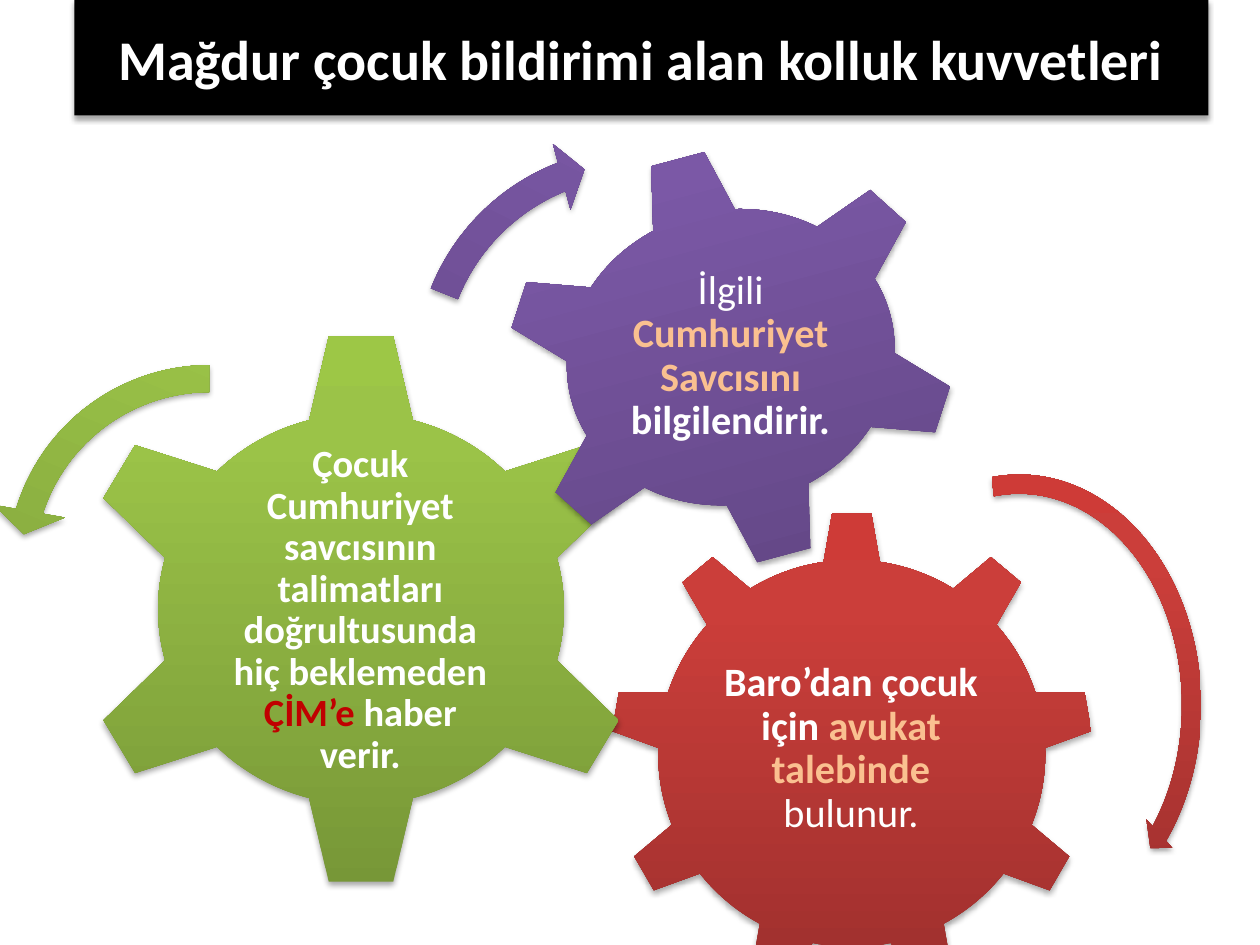
from copy import deepcopy

from lxml import etree
from pptx import Presentation
from pptx import util as u
from pptx.dml.color import RGBColor
from pptx.enum import shapes, text
from pptx.oxml.ns import qn

GEAR6 = shapes.MSO_SHAPE.GEAR_6
GEAR9 = shapes.MSO_SHAPE.GEAR_9
ARROW = shapes.MSO_SHAPE.CIRCULAR_ARROW
LEFT_ARROW = shapes.MSO_SHAPE.LEFT_CIRCULAR_ARROW
WHITE, PEACH, DARK_RED = "FFFFFF", "FAC090", "C00000"
RED = ("9C2F2D", "CB3E3A", "CE3B37")
GREEN = ("779737", "9BC348", "9DC746")
PURPLE = ("5F4480", "7B58A6", "7C57A8")


def rgb(value):
    return RGBColor.from_string(value)


class Deck:
    """Slide builder with one font, a soft shadow and three-stop gradients."""

    font = "Calibri"
    stops = (0, 0.8, 1)
    inset = 2

    def __init__(self, width, height):
        self.prs = Presentation()
        self.prs.slide_width, self.prs.slide_height = u.Pt(width), u.Pt(height)
        self.s = self.prs.slides.add_slide(self.prs.slide_layouts[6])

    def shadow(self, sp):
        sp.shadow.inherit = False
        effects = sp._element.spPr.find(qn("a:effectLst"))
        outer = etree.SubElement(
            effects, qn("a:outerShdw"), blurRad=str(u.Pt(3.15)),
            dist=str(u.Pt(1.8)), dir="5400000", rotWithShape="0")
        color = etree.SubElement(outer, qn("a:srgbClr"), val="000000")
        etree.SubElement(color, qn("a:alpha"), val="35000")

    def shape(self, kind, box, rotation=0, adjustments=()):
        sp = self.s.shapes.add_shape(kind, *map(u.Pt, box))
        sp.rotation = rotation
        for i, value in enumerate(adjustments):
            sp.adjustments[i] = value
        sp.line.fill.background()
        self.shadow(sp)
        return sp

    def gradient(self, kind, box, colors, rotation=0, adjustments=()):
        sp = self.shape(kind, box, rotation, adjustments)
        sp.fill.gradient()
        sp.fill.gradient_angle = 90
        stop_list = sp._element.spPr.find(qn("a:gradFill")).find(qn("a:gsLst"))
        stop_list.append(deepcopy(stop_list[-1]))
        for stop, position, color in zip(sp.fill.gradient_stops, self.stops, colors):
            stop.position = position
            stop.color.rgb = rgb(color)

    def add_runs(self, tf, runs, size):
        tf.word_wrap = True
        tf.vertical_anchor = text.MSO_ANCHOR.MIDDLE
        p = tf.paragraphs[0]
        p.alignment = text.PP_ALIGN.CENTER
        for words, color, bold in runs:
            r = p.add_run()
            r.text = words
            r.font.name, r.font.size, r.font.bold = self.font, u.Pt(size), bold
            r.font.color.rgb = rgb(color)
        return p

    def title(self, box, words):
        sp = self.shape(shapes.MSO_SHAPE.RECTANGLE, box)
        sp.fill.solid()
        sp.fill.fore_color.rgb = rgb("000000")
        self.add_runs(sp.text_frame, [(words, WHITE, True)], 32)

    def label(self, box, runs, size):
        tf = self.s.shapes.add_textbox(*map(u.Pt, box)).text_frame
        tf.margin_left = tf.margin_right = u.Pt(self.inset)
        tf.margin_top = tf.margin_bottom = u.Pt(self.inset)
        self.add_runs(tf, runs, size).line_spacing = 0.9


def main():
    deck = Deck(720, 540)
    deck.title((42.5, 0, 648, 66), "Mağdur çocuk bildirimi alan kolluk kuvvetleri")

    deck.gradient(GEAR9, (348.5, 292.3, 276.5, 276.5), RED)
    deck.label((403.9, 357.1, 164.9, 141.8), [
        ("Baro’dan çocuk için ", WHITE, True),
        ("avukat talebinde ", PEACH, True),
        ("bulunur.", WHITE, False)], 23)

    deck.gradient(GEAR6, (42.5, 188.6, 327.6, 319), GREEN)
    deck.label((123.8, 270, 164.2, 157.7), [
        ("Çocuk Cumhuriyet savcısının talimatları doğrultusunda hiç beklemeden ",
         WHITE, True),
        ("ÇİM’e ", DARK_RED, True),
        ("haber verir.", WHITE, True)], 22)

    deck.gradient(GEAR6, (287.3, 84.2, 260.6, 239.8), PURPLE, 345)
    deck.label((345.6, 135.4, 144, 136.8), [
        ("İlgili ", WHITE, False),
        ("Cumhuriyet Savcısını ", PEACH, True),
        ("bilgilendirir.", WHITE, True)], 23)

    deck.gradient(ARROW, (473, 265.7, 218.9, 274.3), RED, 0,
                  (0.05, 2.99, 25.52, 157.87, 0.05))
    deck.gradient(LEFT_ARROW, (-8.6, 195.8, 257, 257), GREEN, 22.5,
                  (0.06, 4.3, 104.89, 148.38, 0.08))
    deck.gradient(ARROW, (226.1, 73.4, 277.2, 277.2), PURPLE, 26.6,
                  (0.06, 3.94, 133.14, 105.08, 0.07))
    deck.prs.save("out.pptx")


if __name__ == "__main__":
    main()
